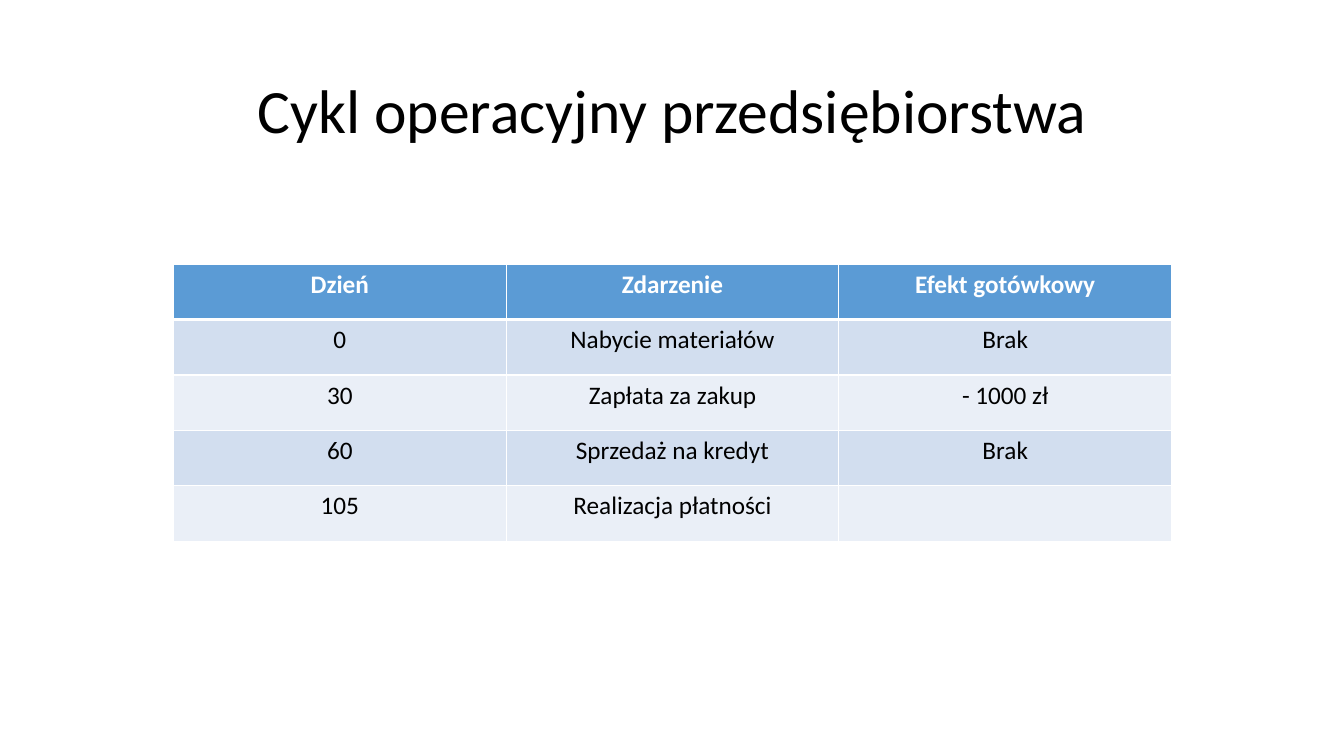
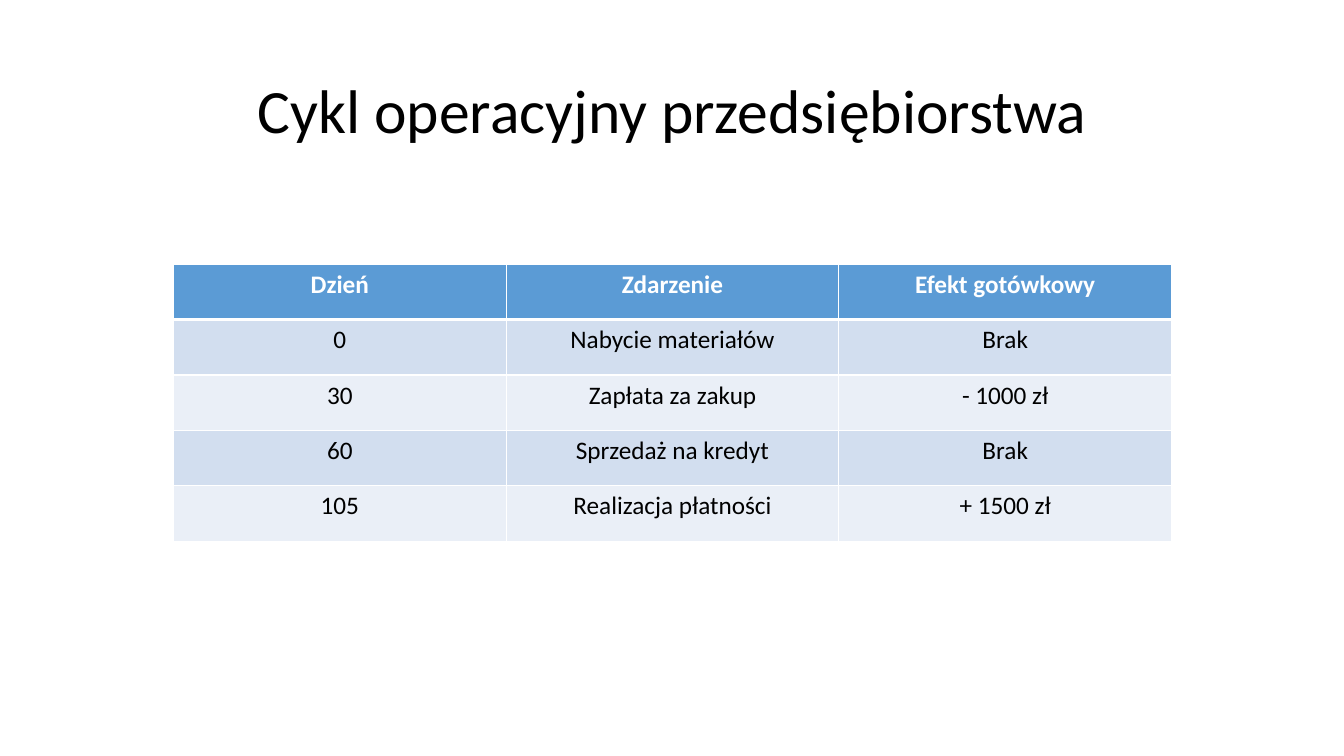
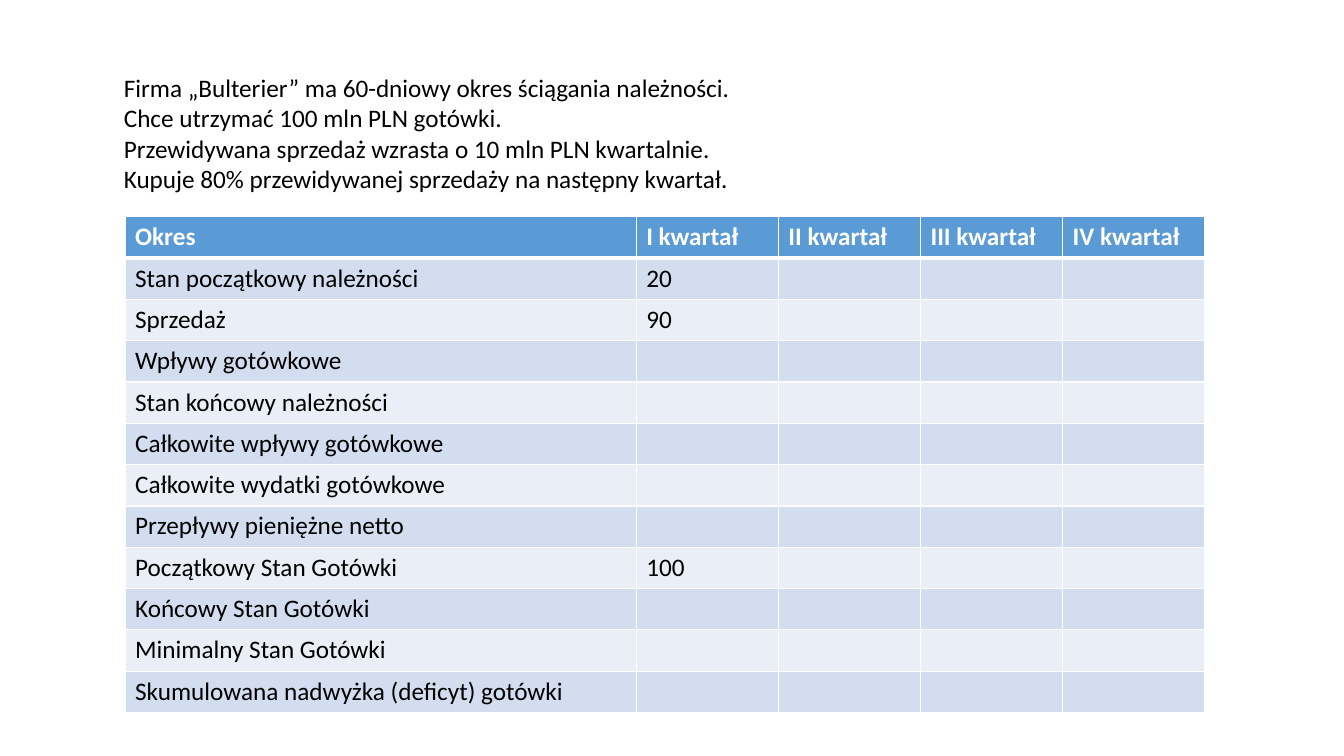
from lxml.etree import SubElement
from pptx import Presentation
from pptx.dml.color import RGBColor as Rgb
from pptx.enum.text import MSO_ANCHOR as Anchor, PP_ALIGN as Align
from pptx.oxml.ns import qn
from pptx.util import Inches, Pt

COLORS = {
    "text": "000000",
    "grid": "FFFFFF",
    "header": "5B9BD5",
    "header_text": "FFFFFF",
    "odd_row": "D2DEEF",
    "even_row": "EAEFF7",
}
BODY = {"name": "Calibri", "size": Pt(18), "bold": False}
HEADER = {**BODY, "bold": True}
TITLE = {**BODY, "size": Pt(44)}
TITLE_PARAGRAPH = {"alignment": Align.CENTER, "line_spacing": 0.9}
CENTERED = {"alignment": Align.CENTER}
LEFT = {"alignment": Align.LEFT}

CYCLE_TITLE = "Cykl operacyjny przedsiębiorstwa"
CYCLE_ROWS = [
    ("Dzień", "Zdarzenie", "Efekt gotówkowy"),
    ("0", "Nabycie materiałów", "Brak"),
    ("30", "Zapłata za zakup", "- 1000 zł"),
    ("60", "Sprzedaż na kredyt", "Brak"),
]
CYCLE_END = ("105", "Realizacja płatności")

ASSUMPTIONS = [
    "Firma „Bulterier” ma 60-dniowy okres ściągania należności.",
    "Chce utrzymać 100 mln PLN gotówki.",
    "Przewidywana sprzedaż wzrasta o 10 mln PLN kwartalnie.",
    "Kupuje 80% przewidywanej sprzedaży na następny kwartał.",
]
BUDGET_ROWS = [
    ("Okres", "I kwartał", "II kwartał", "III kwartał", "IV kwartał"),
    ("Stan początkowy należności", "20"),
    ("Sprzedaż", "90"),
    ("Wpływy gotówkowe",),
    ("Stan końcowy należności",),
    ("Całkowite wpływy gotówkowe",),
    ("Całkowite wydatki gotówkowe",),
    ("Przepływy pieniężne netto",),
    ("Początkowy Stan Gotówki", "100"),
    ("Końcowy Stan Gotówki",),
    ("Minimalny Stan Gotówki",),
    ("Skumulowana nadwyżka (deficyt) gotówki",),
]


def apply(target, values):
    for key, value in values.items():
        setattr(target, key, value)


def write(paragraph, text, font, color, layout):
    apply(paragraph, layout)
    run = paragraph.add_run()
    run.text = text
    apply(run.font, font)
    run.font.color.rgb = Rgb.from_string(COLORS[color])


def add_text(slide, lines, box, font, layout, anchor=Anchor.TOP):
    frame = slide.shapes.add_textbox(*map(Inches, box)).text_frame
    apply(frame, {"word_wrap": True, "vertical_anchor": anchor})
    for index, line in enumerate(lines):
        paragraph = frame.add_paragraph() if index else frame.paragraphs[0]
        write(paragraph, line, font, "text", layout)


def add_borders(cell, row):
    widths = {"L": 1, "R": 1, "T": 3 if row == 1 else 1, "B": 3 if row == 0 else 1}
    properties = cell._tc.get_or_add_tcPr()
    for side, width in widths.items():
        border = SubElement(properties, qn(f"a:ln{side}"), w=str(Pt(width)))
        fill = SubElement(border, qn("a:solidFill"))
        SubElement(fill, qn("a:srgbClr"), val=COLORS["grid"])


def add_grid(slide, rows, left, top, widths, row_height, layout):
    table = slide.shapes.add_table(
        len(rows), len(widths), Inches(left), Inches(top),
        Inches(sum(widths)), Inches(row_height * len(rows)),
    ).table
    for column, width in zip(table.columns, widths):
        column.width = Inches(width)
    for index, (line, values) in enumerate(zip(table.rows, rows)):
        line.height = Inches(row_height)
        band = "header" if index == 0 else "odd_row" if index % 2 else "even_row"
        font, color = (BODY, "text") if index else (HEADER, "header_text")
        for cell in line.cells:
            add_borders(cell, index)
            cell.fill.solid()
            cell.fill.fore_color.rgb = Rgb.from_string(COLORS[band])
        for cell, value in zip(line.cells, values):
            write(cell.text_frame.paragraphs[0], value, font, color, layout)


def add_cycle_slide(slide, final_effect):
    rows = CYCLE_ROWS + [CYCLE_END + final_effect]
    add_grid(slide, rows, 1.72, 2.62, [3.3] * 3, 0.55, CENTERED)
    add_text(slide, [CYCLE_TITLE], (0.92, 0.4, 11.5, 1.45),
             TITLE, TITLE_PARAGRAPH, Anchor.MIDDLE)


def add_budget_slide(slide):
    add_grid(slide, BUDGET_ROWS, 1.24, 2.15, [5.07] + [1.41] * 4, 0.41, LEFT)
    add_text(slide, ASSUMPTIONS, (1.13, 0.67, 10.95, 1.62), BODY, LEFT)


def main():
    deck = Presentation()
    apply(deck, {"slide_width": Inches(13.33), "slide_height": Inches(7.5)})
    blank = deck.slide_layouts[6]
    for final_effect in [(), ("+ 1500 zł",)]:
        add_cycle_slide(deck.slides.add_slide(blank), final_effect)
    add_budget_slide(deck.slides.add_slide(blank))
    deck.save("out.pptx")


if __name__ == "__main__":
    main()
